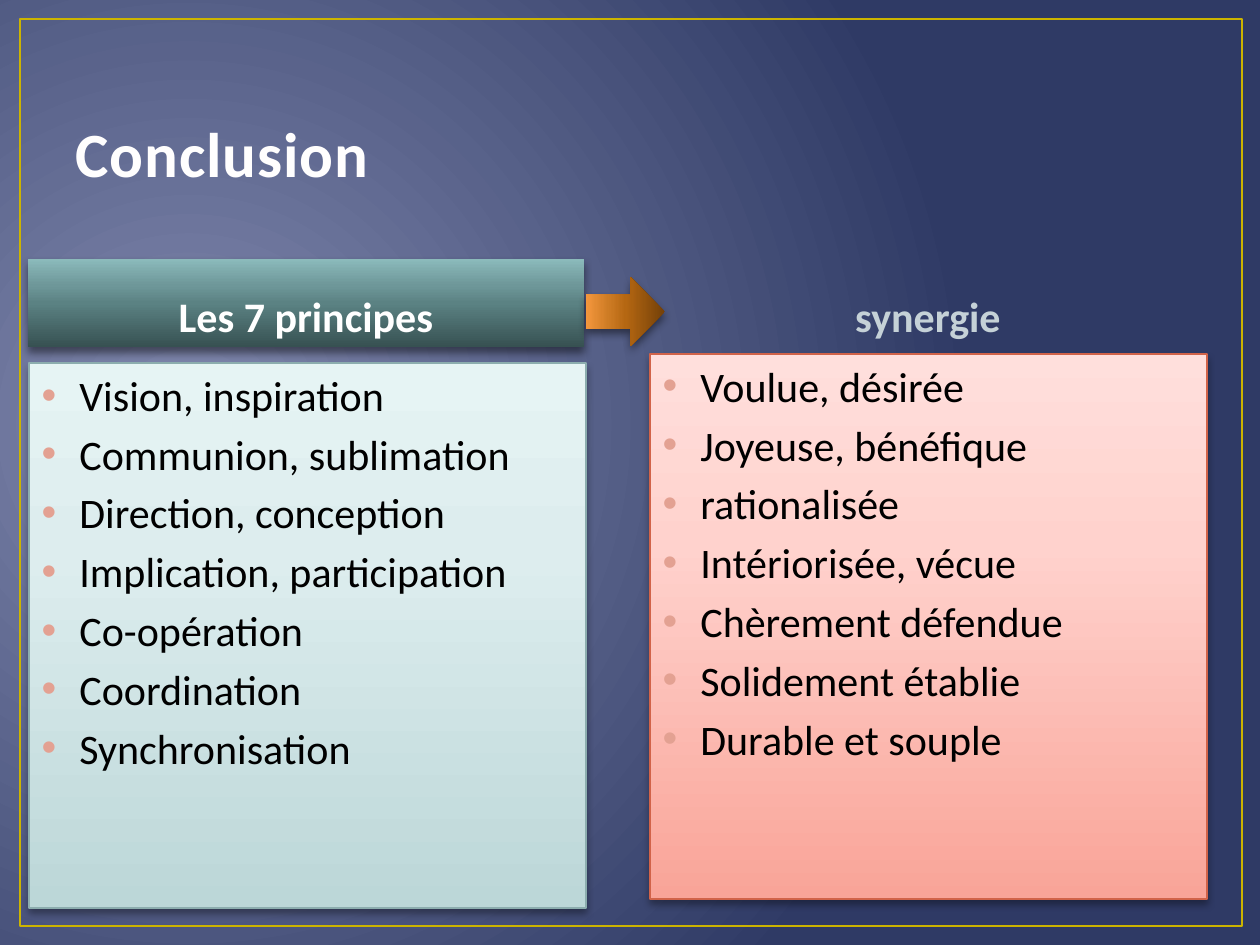
"""Build the conclusion slide: seven principles leading to synergy."""
import lxml.etree
import pptx
import pptx.dml.color
import pptx.enum.shapes
import pptx.enum.text
import pptx.oxml
import pptx.oxml.ns
import pptx.util

PX = 914400 / 126
NS = pptx.oxml.ns.nsdecls("a")
MIDDLE = pptx.enum.text.PP_ALIGN.CENTER
LEFT = pptx.enum.text.PP_ALIGN.LEFT


def color(hex_code):
    return pptx.dml.color.RGBColor.from_string(hex_code)


def paint_gradient(fill, element, stops, direction):
    fill.gradient()
    stop_xml = "".join(
        f'<a:gs pos="{percent * 1000}"><a:srgbClr val="{hex_code}"/></a:gs>'
        for percent, hex_code in stops
    )
    default = element.find(".//" + pptx.oxml.ns.qn("a:gradFill"))
    default.getparent().replace(default, pptx.oxml.parse_xml(
        f'<a:gradFill {NS} rotWithShape="1"><a:gsLst>{stop_xml}</a:gsLst>{direction}</a:gradFill>'
    ))


deck = pptx.Presentation()
deck.slide_width, deck.slide_height = int(1260 * PX), int(945 * PX)
slide = deck.slides.add_slide(deck.slide_layouts[4])
paint_gradient(
    slide.background.fill, slide.element, [(0, "8189AE"), (100, "2F3A65")],
    '<a:path path="circle"><a:fillToRect l="15000" t="50000" r="85000" b="60000"/></a:path>',
)

shape_kinds = pptx.enum.shapes.MSO_SHAPE
border = slide.shapes.add_shape(
    shape_kinds.RECTANGLE, *[int(n * PX) for n in (20, 19, 1222, 907)])
border.shadow.inherit = False
border.fill.background()
border.line.color.rgb = color("CCB400")
border.line.width = pptx.util.Pt(1.5)
slide.shapes._spTree.insert(2, border._element)

title, principles_heading, principles, synergy_heading, synergy = slide.placeholders
heading_format = {"size": pptx.util.Pt(24), "bold": True, "name": "Calibri"}
list_format = heading_format | {"bold": False}
texts = [
    (title, (63, 38, 1134, 158), ["Conclusion"], "FFFEFE", LEFT,
     heading_format | {"size": pptx.util.Pt(36)}),
    (principles_heading, (28, 259, 556, 88), ["Les 7 principes"], "FFFFFF", MIDDLE, heading_format),
    (synergy_heading, (650, 259, 556, 88), ["synergie"], "C5D1D7", MIDDLE, heading_format),
    (principles, (29, 363, 557, 545), [
        "Vision, inspiration", "Communion, sublimation", "Direction, conception",
        "Implication, participation", "Co-opération", "Coordination", "Synchronisation",
    ], "000000", LEFT, list_format),
    (synergy, (650, 354, 557, 545), [
        "Voulue, désirée", "Joyeuse, bénéfique", "rationalisée", "Intériorisée, vécue",
        "Chèrement défendue", "Solidement établie", "Durable et souple",
    ], "000000", LEFT, list_format),
]
for holder, box, lines, ink, alignment, font_format in texts:
    holder.left, holder.top, holder.width, holder.height = [int(n * PX) for n in box]
    frame = holder.text_frame
    frame.text = "\n".join(lines)
    frame.auto_size = pptx.enum.text.MSO_AUTO_SIZE.NONE
    is_list = len(lines) > 1
    anchors = pptx.enum.text.MSO_ANCHOR
    frame.vertical_anchor = anchors.TOP if is_list else anchors.BOTTOM
    for paragraph in frame.paragraphs:
        paragraph.alignment = alignment
        font = paragraph.runs[0].font
        for attribute, value in font_format.items():
            setattr(font, attribute, value)
        font.color.rgb = color(ink)
        if is_list:
            properties = paragraph._p.get_or_add_pPr()
            properties.set("marL", "274320")
            properties.set("indent", "-274320")
            for bullet in ('<a:buClr {}><a:srgbClr val="E3A192"/></a:buClr>',
                           '<a:buFont {} typeface="Arial"/>', '<a:buChar {} char="•"/>'):
                properties.append(pptx.oxml.parse_xml(bullet.format(NS)))
title.text_frame.paragraphs[0].runs[0]._r.get_or_add_rPr().set("spc", "50")

arrow = slide.shapes.add_shape(
    shape_kinds.DOWN_ARROW, *[int(n * PX) for n in (591, 272, 69, 79)])
arrow.rotation = 270

panels = [
    (principles_heading, [(0, "375152"), (50, "5B8283"), (70, "6E9799"), (100, "8BBABB")],
     None, (45, 5, 3)),
    (principles, [(0, "BCD7D8"), (65, "DDEDEE"), (100, "E6F4F4")], "8CADAE", (35, 4, 3)),
    (synergy, [(0, "F9A498"), (65, "FFD2CD"), (100, "FFDFDC")], "D16349", (35, 4, 3)),
    (arrow, [(0, "734008"), (50, "B56712"), (70, "CC7A23"), (100, "F4973D")],
     None, (45, 5, 3)),
]
for panel, stops, edge, (opacity, blur, distance) in panels:
    properties = panel._element.spPr
    paint_gradient(panel.fill, properties, stops, '<a:lin ang="16200000" scaled="0"/>')
    if edge:
        panel.line.color.rgb = color(edge)
        panel.line.width = pptx.util.Pt(0.75)
    else:
        panel.line.fill.background()
    if panel is arrow:
        panel.shadow.inherit = False
        effects = properties.find(pptx.oxml.ns.qn("a:effectLst"))
    else:
        effects = lxml.etree.SubElement(properties, pptx.oxml.ns.qn("a:effectLst"))
    effects.append(pptx.oxml.parse_xml(
        f'<a:outerShdw {NS} blurRad="{blur * 12700}" dist="{distance * 12700}" dir="5400000" '
        f'rotWithShape="0"><a:srgbClr val="000000"><a:alpha val="{opacity * 1000}"/>'
        '</a:srgbClr></a:outerShdw>'
    ))

deck.save("out.pptx")
